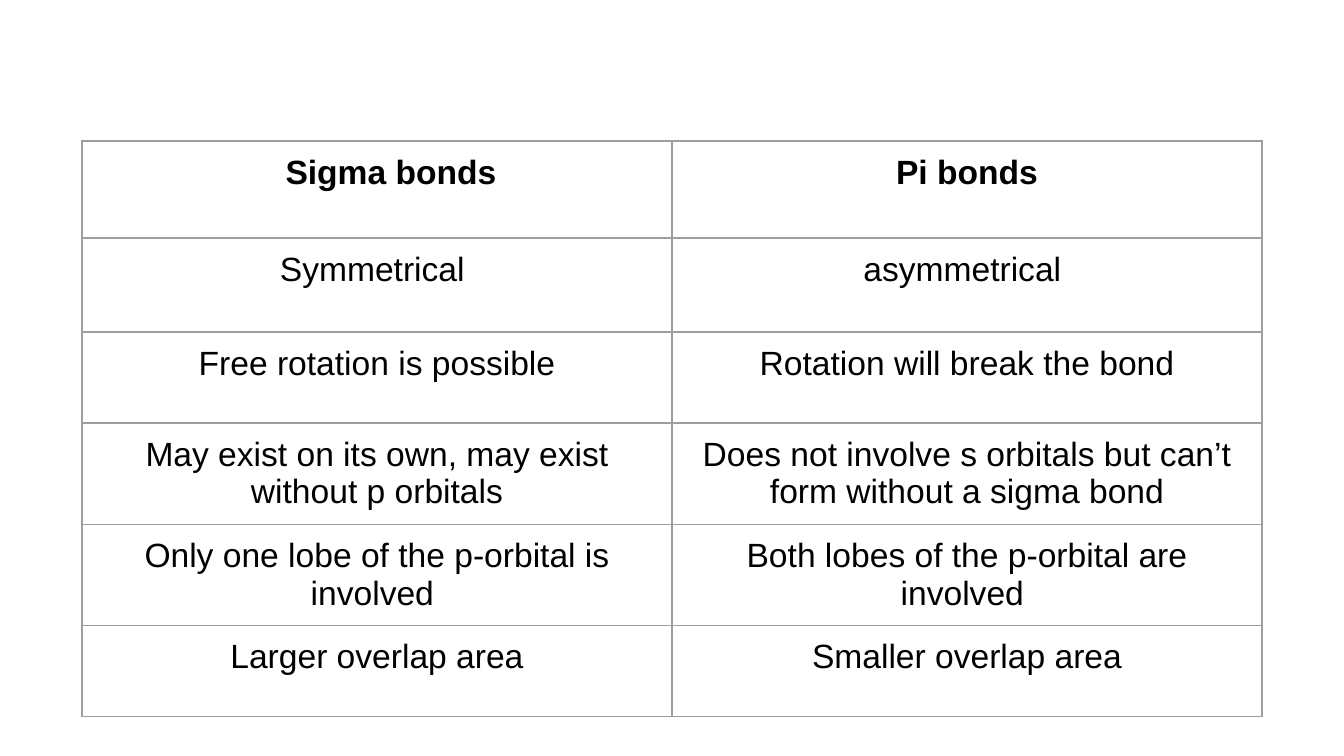
from lxml import etree
from pptx import Presentation
from pptx.dml.color import RGBColor
from pptx.enum.text import MSO_ANCHOR, PP_ALIGN
from pptx.oxml.ns import qn
from pptx.util import Emu, Pt

SCALE = 914400 / 134.4
TOP = MSO_ANCHOR.TOP
CENTER = PP_ALIGN.CENTER
BLACK = RGBColor(0x00, 0x00, 0x00)
BORDER_GRAY = RGBColor(0x9E, 0x9E, 0x9E)

COLUMN_WIDTH = 590
ROW_HEIGHTS = [97, 94, 91, 91, 91, 91]
BOND_COMPARISON = [
    ("Sigma bonds", "Pi bonds"),
    ("Symmetrical ", "asymmetrical "),
    ("Free rotation is possible", "Rotation will break the bond"),
    ("May exist on its own, may exist without p orbitals",
     "Does not involve s orbitals but can’t form without a sigma bond"),
    ("Only one lobe of the p-orbital is involved ",
     "Both lobes of the p-orbital are involved "),
    ("Larger overlap area", "Smaller overlap area"),
]


def px(length):
    return Emu(round(length * SCALE))


def apply_format(target, values):
    for name, value in values.items():
        setattr(target, name, value)


def add_borders(cell):
    properties = cell._tc.get_or_add_tcPr()
    for side in ("a:lnL", "a:lnR", "a:lnT", "a:lnB"):
        border = etree.SubElement(properties, qn(side), w=str(Pt(0.75)))
        fill = etree.SubElement(border, qn("a:solidFill"))
        etree.SubElement(fill, qn("a:srgbClr"), val=str(BORDER_GRAY))


def fill_cell(cell, wording, bold):
    add_borders(cell)
    cell.fill.background()
    margins = ("margin_left", "margin_right", "margin_top", "margin_bottom")
    apply_format(cell, {"vertical_anchor": TOP, **dict.fromkeys(margins, px(13))})
    paragraph = cell.text_frame.paragraphs[0]
    paragraph.alignment = CENTER
    run = paragraph.add_run()
    run.text = wording
    apply_format(run.font, {"name": "Arial", "size": Pt(18), "bold": bold})
    run.font.color.rgb = BLACK


def indent_paragraph(cell, margin, first_line):
    properties = cell.text_frame.paragraphs[0]._p.get_or_add_pPr()
    properties.set("marL", str(px(margin)))
    properties.set("indent", str(px(first_line)))


def add_comparison(slide, left, top):
    column_count = len(BOND_COMPARISON[0])
    comparison = slide.shapes.add_table(
        len(BOND_COMPARISON), column_count, px(left), px(top),
        px(COLUMN_WIDTH * column_count), px(sum(ROW_HEIGHTS))).table
    apply_format(comparison, {"first_row": False, "horz_banding": False})
    for column in comparison.columns:
        column.width = px(COLUMN_WIDTH)
    for row, height in zip(comparison.rows, ROW_HEIGHTS):
        row.height = px(height)
    for row_index, statements in enumerate(BOND_COMPARISON):
        for column_index, wording in enumerate(statements):
            fill_cell(comparison.cell(row_index, column_index), wording, row_index == 0)
    indent_paragraph(comparison.cell(0, 0), 51, -23)


def main():
    presentation = Presentation()
    apply_format(presentation, {"slide_width": px(1344), "slide_height": px(756)})
    slide = presentation.slides.add_slide(presentation.slide_layouts[6])
    add_comparison(slide, 82, 141)
    presentation.save("out.pptx")


if __name__ == "__main__":
    main()
